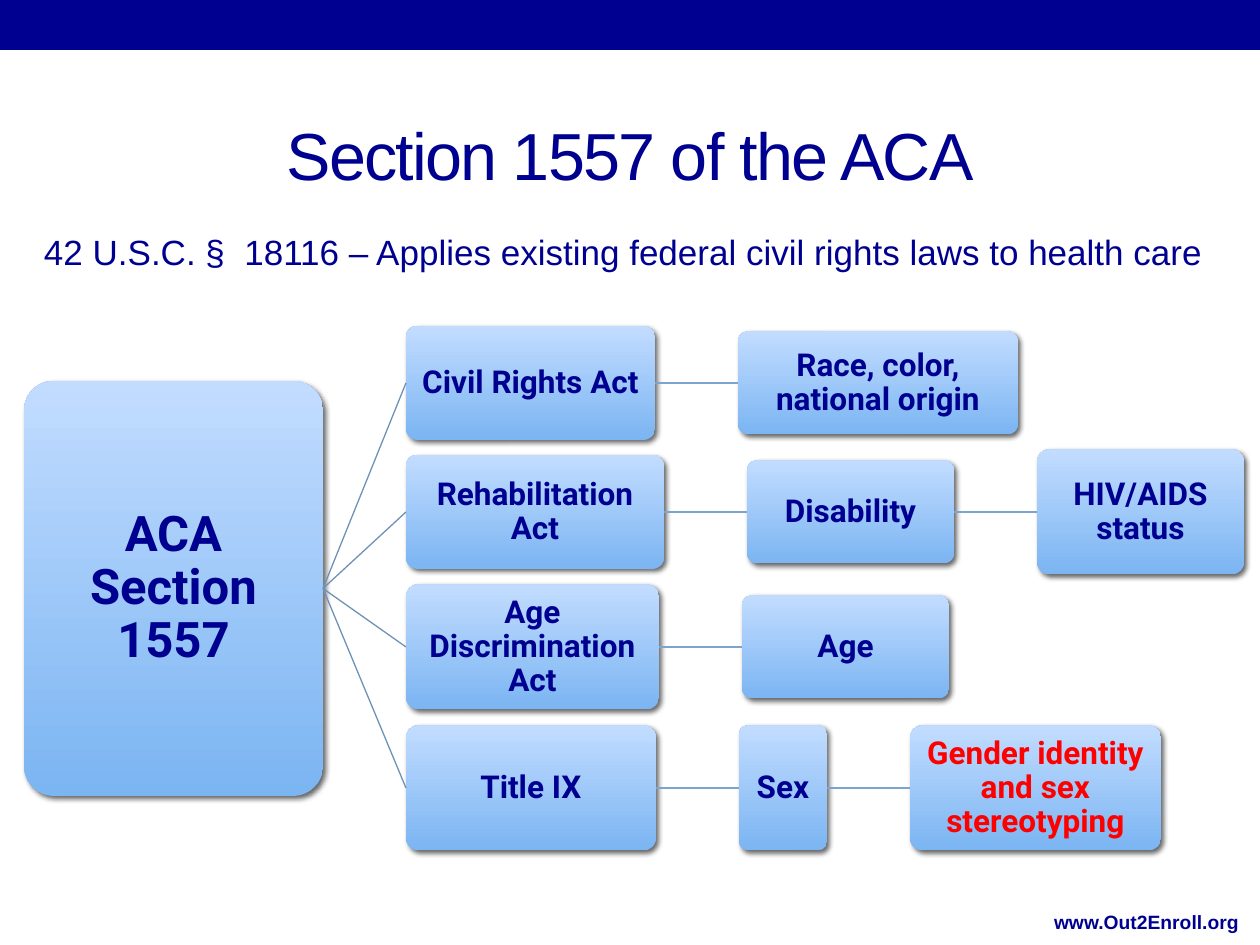
import pptx
import pptx.util
import pptx.dml.color
import pptx.enum.shapes
import pptx.enum.text
import pptx.oxml.ns
import lxml.etree

PX = 914400 / 126
NAVY, RED, LIGHT, MID = "000090", "FF0000", "C2DCFF", "7BB5F2"
SHAPE = pptx.enum.shapes.MSO_SHAPE
ALIGN = pptx.enum.text.PP_ALIGN
ANCHOR = pptx.enum.text.MSO_ANCHOR
rgb = pptx.dml.color.RGBColor.from_string
A = pptx.oxml.ns.nsdecls("a")
SHADOW = (f'<a:outerShdw {A} blurRad="38100" dist="25400" dir="2700000" rotWithShape="0">'
          '<a:srgbClr val="000000"><a:alpha val="60000"/></a:srgbClr></a:outerShdw>')


def put_text(sp, text, size, font="Arial", color=NAVY, bold=False, align=ALIGN.LEFT,
             anchor=ANCHOR.TOP, inset=6, bottom=None, spacing=None, tracking=None):
    tf = sp.text_frame
    tf.word_wrap = True
    tf.vertical_anchor = anchor
    tf.margin_left = tf.margin_right = tf.margin_top = round(inset * PX)
    tf.margin_bottom = round((inset if bottom is None else bottom) * PX)
    p = tf.paragraphs[0]
    p.alignment = align
    p.line_spacing = spacing
    r = p.add_run()
    r.text = text
    r.font.size = pptx.util.Pt(size)
    r.font.name = font
    r.font.bold = bold
    r.font.color.rgb = rgb(color)
    if tracking:
        r._r.get_or_add_rPr().set("spc", str(tracking))


def add_box(x, y, w, h, text, size, color=NAVY, inset=1):
    sp = s.shapes.add_shape(SHAPE.ROUNDED_RECTANGLE, *[round(v * PX) for v in (x, y, w, h)])
    sp.adjustments[0] = 0.1
    sp.fill.gradient()
    sp.fill.gradient_angle = 90
    for stop, shade in zip(sp.fill.gradient_stops, (MID, LIGHT)):
        stop.color.rgb = rgb(shade)
    sp.line.fill.background()
    sp.shadow.inherit = False
    effects = sp._element.spPr.find(pptx.oxml.ns.qn("a:effectLst"))
    effects.append(pptx.oxml.parse_xml(SHADOW))
    put_text(sp, text, size, font="Roboto", color=color, bold=True, align=ALIGN.CENTER,
             anchor=ANCHOR.MIDDLE, inset=inset, spacing=0.9)
    return sp


prs = pptx.Presentation()
prs.slide_width = pptx.util.Inches(10)
prs.slide_height = pptx.util.Inches(7.5)
s = prs.slides.add_slide(prs.slide_layouts[6])

# Top bar
bar = s.shapes.add_shape(SHAPE.RECTANGLE, 0, 0, prs.slide_width, round(50 * PX))
bar.fill.solid()
bar.fill.fore_color.rgb = rgb(NAVY)
bar.line.fill.background()
bar.shadow.inherit = False

# Title, subtitle and web address
texts = [
    ((63, 86, 1134, 136), "Section 1557 of the ACA",
     dict(size=38, align=ALIGN.CENTER, anchor=ANCHOR.MIDDLE, tracking=-100)),
    ((38, 224, 1184, 97),
     "42 U.S.C. §  18116 – Applies existing federal civil rights laws to health care",
     dict(size=20)),
    ((795, 863, 450, 70), "www.Out2Enroll.org",
     dict(size=11, bold=True, align=ALIGN.RIGHT, anchor=ANCHOR.BOTTOM, bottom=0, spacing=0.8)),
]
for place, text, style in texts:
    put_text(s.shapes.add_textbox(*[round(v * PX) for v in place]), text, **style)

# Tree: each row is a chain of (text, width, height, colour) around its centre line
GAP = 83
ROOT_X, ROOT_W = 24, 299
rows = [
    (383, [("Civil Rights Act", 249, 114, NAVY),
           ("Race, color, national origin", 280, 103, NAVY)]),
    (512, [("Rehabilitation Act", 258, 114, NAVY), ("Disability", 207, 103, NAVY),
           ("HIV/AIDS status", 207, 125, NAVY)]),
    (647, [("Age Discrimination Act", 253, 125, NAVY), ("Age", 207, 103, NAVY)]),
    (788, [("Title IX", 250, 125, NAVY), ("Sex", 88, 125, NAVY),
           ("Gender identity and sex stereotyping", 251, 125, RED)]),
]
root = add_box(ROOT_X, 381, ROOT_W, 415, "ACA Section 1557", 28, inset=4)
for center, chain in rows:
    parent, x, line_color = root, ROOT_X + ROOT_W + GAP, "6E91B7"
    for text, w, h, color in chain:
        sp = add_box(x, center - h / 2, w, h, text, 18, color)
        cn = s.shapes.add_connector(pptx.enum.shapes.MSO_CONNECTOR.STRAIGHT, 0, 0, 0, 0)
        cn.begin_connect(parent, 3)
        cn.end_connect(sp, 1)
        cn.line.color.rgb = rgb(line_color)
        cn.line.width = pptx.util.Pt(0.75)
        lxml.etree.SubElement(cn._element.spPr, pptx.oxml.ns.qn("a:effectLst"))
        parent, x, line_color = sp, x + w + GAP, "7CA4CF"

prs.save("out.pptx")
